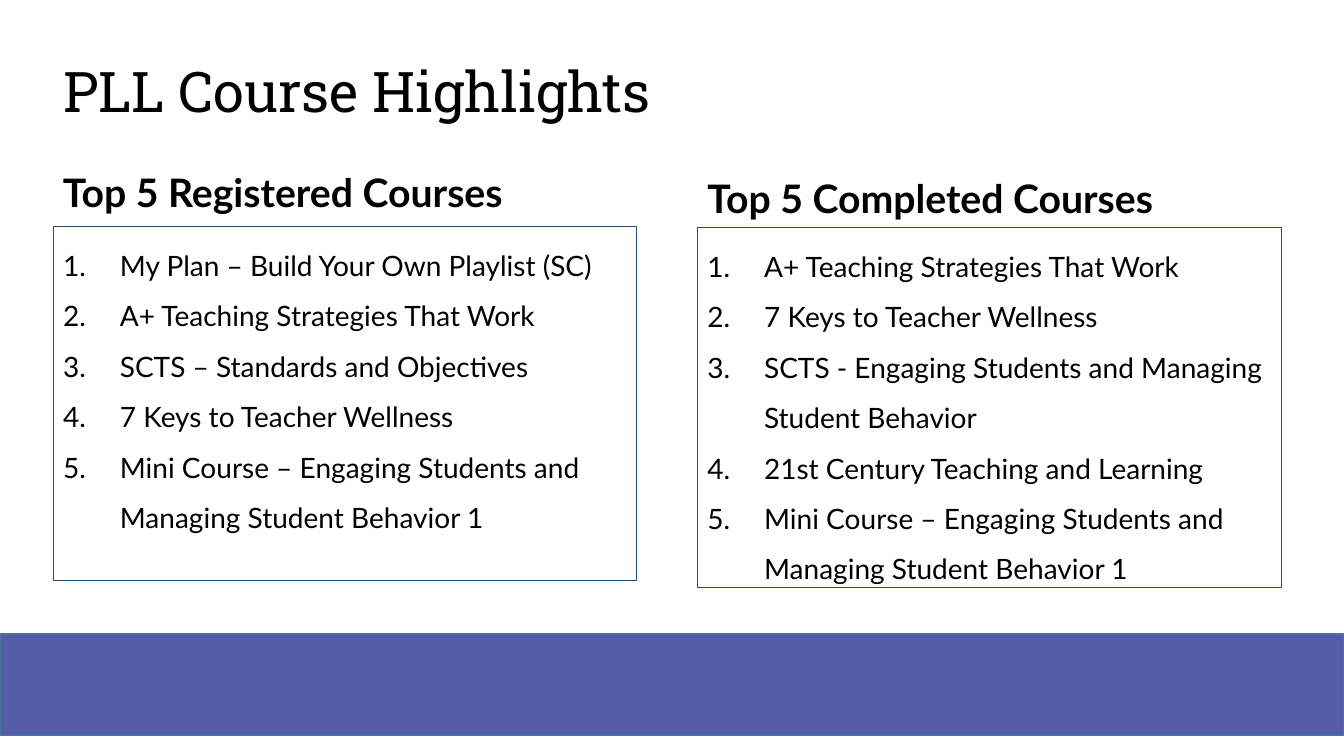
from dataclasses import dataclass

from lxml import etree
from pptx import Presentation
from pptx import util as u
from pptx.dml.color import RGBColor
from pptx.enum import shapes, text
from pptx.oxml import ns


@dataclass(frozen=True)
class Theme:
    ink = RGBColor.from_string("000000")
    band = RGBColor.from_string("565BA7")
    band_edge = RGBColor.from_string("43739E")
    frame = RGBColor.from_string("1F4E79")
    title_font = "Roboto Slab"
    body_font = "Lato"
    title_size = u.Pt(40)
    heading_size = u.Pt(28)
    list_size = u.Pt(20)


theme = Theme()


def add_text(page, lines, at, *, size, font=theme.body_font, bold=False,
             spacing=1.0, anchor=text.MSO_ANCHOR.TOP, indent=None):
    """Add a text box; an indent in points makes it a numbered list."""
    box = page.shapes.add_textbox(*map(u.Pt, at))
    frame = box.text_frame
    frame.word_wrap = True
    frame.vertical_anchor = anchor
    for index, line in enumerate(lines):
        para = frame.paragraphs[0] if index == 0 else frame.add_paragraph()
        para.line_spacing = spacing
        if indent:
            props = para._p.get_or_add_pPr()
            props.set("marL", str(u.Pt(indent)))
            props.set("indent", str(-u.Pt(indent)))
            etree.SubElement(props, ns.qn("a:buFont"), typeface="+mj-lt")
            etree.SubElement(props, ns.qn("a:buAutoNum"), type="arabicPeriod")
        span = para.add_run()
        span.text = line
        span.font.name = font
        span.font.size = size
        span.font.bold = bold
        span.font.color.rgb = theme.ink
    return box


deck = Presentation()
deck.slide_width, deck.slide_height = u.Pt(960), u.Pt(540)
page = deck.slides.add_slide(deck.slide_layouts[6])

# Band along the bottom
band = page.shapes.add_shape(shapes.MSO_SHAPE.RECTANGLE,
                             u.Pt(0), u.Pt(453), u.Pt(960), u.Pt(72))
band.shadow.inherit = False
band.fill.solid()
band.fill.fore_color.rgb = theme.band
band.line.color.rgb = theme.band_edge
band.line.width = u.Pt(1)

# Title
add_text(page, ["PLL Course Highlights"], (38, 24.5, 864, 86.4),
         size=theme.title_size, font=theme.title_font, spacing=0.9,
         anchor=text.MSO_ANCHOR.MIDDLE)

# Two columns: heading, its place and line spacing, courses and their frame
columns = [
    ("Top 5 Registered Courses", (37.8, 120.2, 466.6, 64.8), 0.9,
     ["My Plan – Build Your Own Playlist (SC)",
      "A+ Teaching Strategies That Work",
      "SCTS – Standards and Objectives",
      "7 Keys to Teacher Wellness",
      "Mini Course – Engaging Students and Managing Student Behavior 1"],
     (38, 162, 416.9, 252.7)),
    ("Top 5 Completed Courses", (498.2, 121, 346.3, 41), 1.0,
     ["A+ Teaching Strategies That Work",
      "7 Keys to Teacher Wellness",
      "SCTS - Engaging Students and Managing Student Behavior",
      "21st Century Teaching and Learning",
      "Mini Course – Engaging Students and Managing Student Behavior 1"],
     (498.2, 162.7, 416.9, 257)),
]
for heading, heading_at, heading_spacing, courses, courses_at in columns:
    course_box = add_text(page, courses, courses_at, size=theme.list_size,
                          spacing=1.5, indent=40.5)
    course_box.line.color.rgb = theme.frame
    course_box.line.width = u.Pt(0.75)
    add_text(page, [heading], heading_at, size=theme.heading_size, bold=True,
             spacing=heading_spacing)

deck.save("out.pptx")
